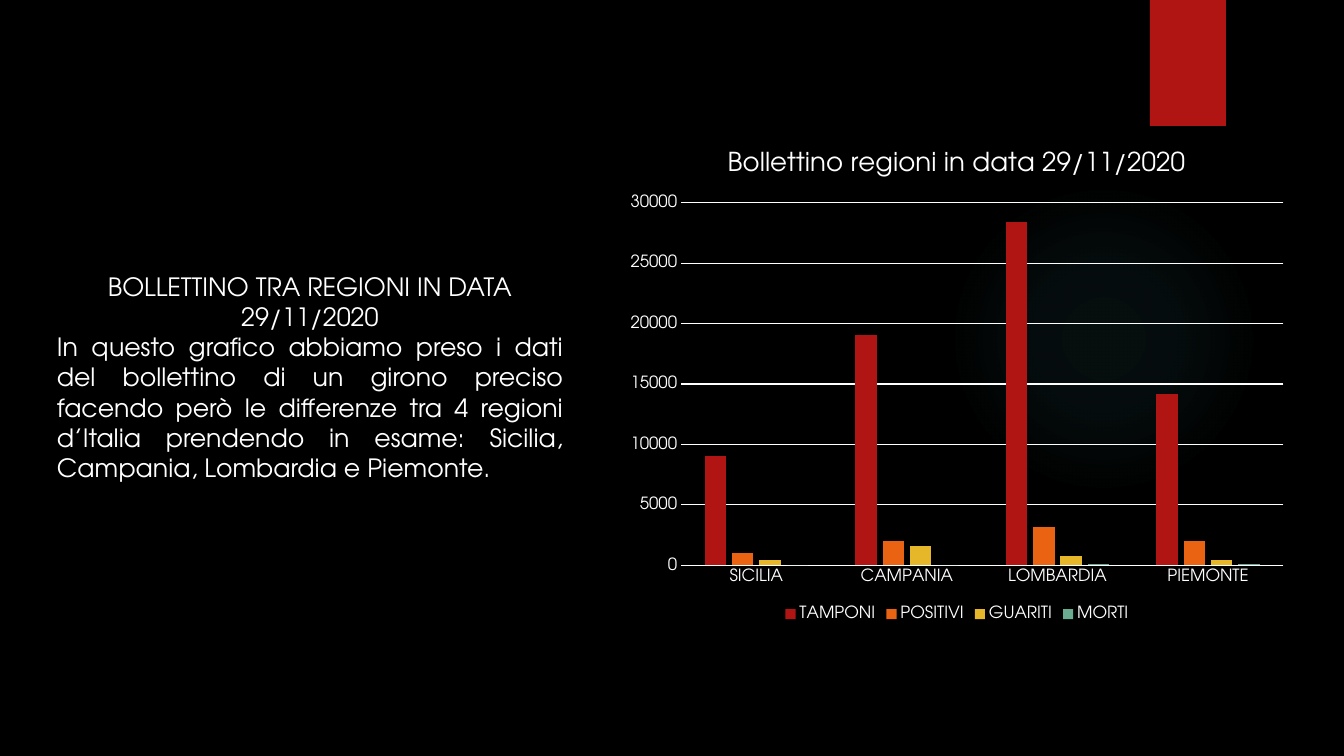
from lxml import etree
from pptx import Presentation, util as u
from pptx.chart.data import CategoryChartData
from pptx.dml.color import RGBColor
from pptx.enum import chart as ch, shapes, text
from pptx.oxml import parse_xml
from pptx.oxml.ns import nsdecls

FONT = "TeX Gyre Adventor"
WHITE, BLACK, RED, TEAL = "FFFFFF", "000000", "B01513", "50B9C1"
SIZE = (1344, 756)
GLOW = (949, 184, 310, 310)
TAB = (1150, 0, 76, 126)
PLOT = (617, 130, 680, 496)
NOTE = (47, 266, 526, 224)
STOPS = [(0, 7), (36, 6), (69, 0)]
TITLE = "Bollettino regioni in data 29/11/2020"
CATS = ["SICILIA", "CAMPANIA", "LOMBARDIA", "PIEMONTE"]
SERIES = [
    ("TAMPONI", RED, (9000, 19100, 28400, 14200)),
    ("POSITIVI", "EA6312", (1000, 2000, 3200, 2000)),
    ("GUARITI", "E6B729", (400, 1600, 800, 400)),
    ("MORTI", "6AAC90", (0, 0, 100, 100)),
]
PARAS = [
    ("BOLLETTINO TRA REGIONI IN DATA 29/11/2020", text.PP_ALIGN.CENTER),
    ("In questo grafico abbiamo preso i dati del bollettino di un girono preciso "
     "facendo però le differenze tra 4 regioni d’Italia prendendo in esame: "
     "Sicilia, Campania, Lombardia e Piemonte.", text.PP_ALIGN.JUSTIFY),
]


def px(*vals):
    return [u.Emu(round(v * 914400 / 100.8)) for v in vals]


def paint(fill, color):
    fill.solid()
    fill.fore_color.rgb = RGBColor.from_string(color)


def style(font, size):
    font.name, font.size, font.bold = FONT, u.Pt(size), False
    paint(font.fill, WHITE)


def rule(line):
    line.width = u.Pt(0.75)
    paint(line.fill, WHITE)


def block(slide, kind, box):
    shape = slide.shapes.add_shape(kind, *px(*box))
    shape.shadow.inherit = False
    shape.line.fill.background()
    return shape


def add_glow(slide):
    shape = block(slide, shapes.MSO_SHAPE.OVAL, GLOW)
    shape.fill.background()
    stops = "".join(
        f'<a:gs pos="{pos * 1000}"><a:srgbClr val="{TEAL}">'
        f'<a:alpha val="{alpha * 1000}"/></a:srgbClr></a:gs>'
        for pos, alpha in STOPS)
    grad = parse_xml(
        f'<a:gradFill {nsdecls("a")} rotWithShape="1"><a:gsLst>{stops}</a:gsLst>'
        '<a:path path="circle"><a:fillToRect l="50000" t="50000" r="50000" '
        'b="50000"/></a:path></a:gradFill>')
    props = shape.element.spPr
    props.replace(props.find("{*}noFill"), grad)


def add_plot(slide):
    data = CategoryChartData()
    data.categories = CATS
    for name, _, vals in SERIES:
        data.add_series(name, vals)
    chart = slide.shapes.add_chart(
        ch.XL_CHART_TYPE.COLUMN_CLUSTERED, *px(*PLOT), data).chart
    style(chart.font, 10)

    chart.has_title = True
    head = chart.chart_title.text_frame
    head.text = TITLE
    style(head.paragraphs[0].runs[0].font, 18.6)
    chart.chart_title.include_in_layout = False

    chart.has_legend = True
    chart.legend.position = ch.XL_LEGEND_POSITION.BOTTOM
    chart.legend.include_in_layout = False
    style(chart.legend.font, 12)

    for axis in (chart.category_axis, chart.value_axis):
        axis.major_tick_mark = axis.minor_tick_mark = ch.XL_TICK_MARK.NONE
        style(axis.tick_labels.font, 12)
    rule(chart.category_axis.format.line)
    chart.value_axis.format.line.fill.background()
    rule(chart.value_axis.major_gridlines.format.line)

    plot = chart.plots[0]
    plot.gap_width, plot.overlap, plot.vary_by_categories = 219, -27, False
    for bars, (_, color, _) in zip(plot.series, SERIES):
        paint(bars.format.fill, color)


def add_note(slide):
    frame = slide.shapes.add_textbox(*px(*NOTE)).text_frame
    frame.word_wrap = True
    frame.auto_size = text.MSO_AUTO_SIZE.SHAPE_TO_FIT_TEXT
    frame.text = "\n".join(line for line, _ in PARAS)
    for para, (_, align) in zip(frame.paragraphs, PARAS):
        para.alignment = align
        style(para.runs[0].font, 18)


def main():
    deck = Presentation()
    deck.slide_width, deck.slide_height = px(*SIZE)
    slide = deck.slides.add_slide(deck.slide_layouts[6])
    paint(slide.background.fill, BLACK)
    add_glow(slide)
    paint(block(slide, shapes.MSO_SHAPE.RECTANGLE, TAB).fill, RED)
    add_plot(slide)
    add_note(slide)
    deck.save("out.pptx")


if __name__ == "__main__":
    main()
